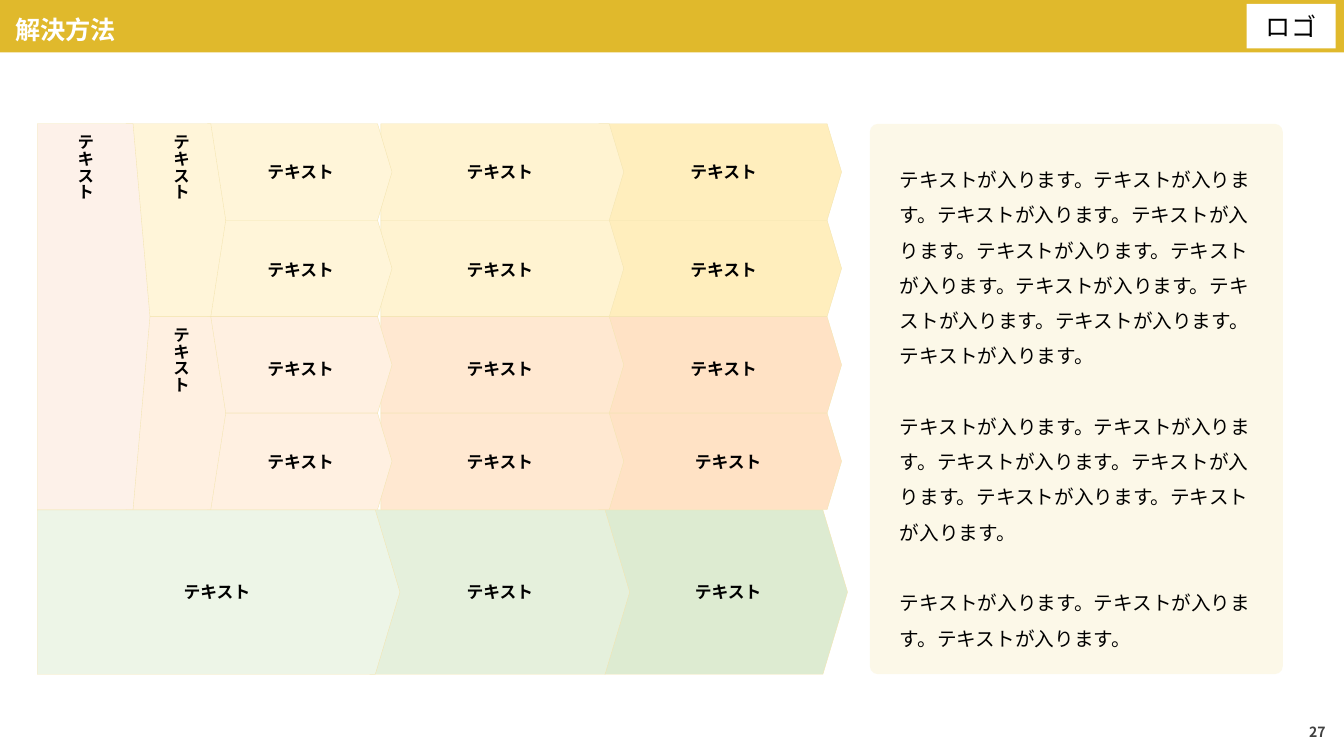
from dataclasses import dataclass

from lxml import etree
from pptx import Presentation
from pptx.dml.color import RGBColor
from pptx.enum.shapes import MSO_SHAPE
from pptx.enum.text import MSO_ANCHOR, PP_ALIGN
from pptx.oxml.ns import qn
from pptx.util import Cm, Pt

RECT, ROUND = MSO_SHAPE.RECTANGLE, MSO_SHAPE.ROUNDED_RECTANGLE
ARROW = MSO_SHAPE.PENTAGON
LEFT, CENTER = PP_ALIGN.LEFT, PP_ALIGN.CENTER
TOP, MIDDLE = MSO_ANCHOR.TOP, MSO_ANCHOR.MIDDLE

FONT = "Noto Sans CJK JP"
GOLD = RGBColor(0xE0, 0xB9, 0x2C)
WHITE = RGBColor(0xFF, 0xFF, 0xFF)
BLACK = RGBColor(0, 0, 0)
GREY = RGBColor(0x40, 0x40, 0x40)
CREAM = RGBColor(0xFC, 0xF8, 0xE8)
EDGE = RGBColor(0xF3, 0xE4, 0xAF)
PINK = RGBColor(0xFD, 0xF1, 0xE9)
YELLOWS = (RGBColor(0xFF, 0xF5, 0xD9), RGBColor(0xFF, 0xF3, 0xD1),
           RGBColor(0xFF, 0xEE, 0xBD))
ORANGES = (RGBColor(0xFF, 0xF0, 0xE1), RGBColor(0xFF, 0xE8, 0xD1),
           RGBColor(0xFF, 0xE2, 0xC5))
GREENS = (RGBColor(0xED, 0xF5, 0xE7), RGBColor(0xE5, 0xF0, 0xDC),
          RGBColor(0xDD, 0xEB, 0xD1))

WORD = "テキスト"
LINE = "テキストが入ります。"
GRID_TOP, ROW = 3.12, 2.43
BASE_TOP, BASE_HIGH = 12.85, 4.14


@dataclass
class Box:
    """Left, top, width and height in centimetres."""
    x: float
    y: float
    w: float
    h: float

    def lengths(self) -> tuple:
        return Cm(self.x), Cm(self.y), Cm(self.w), Cm(self.h)


@dataclass
class Step:
    box: Box
    fill: RGBColor


def add_box(slide, kind, box: Box, fill: RGBColor):
    shape = slide.shapes.add_shape(kind, *box.lengths())
    shape.shadow.inherit = False
    shape.fill.solid()
    shape.fill.fore_color.rgb = fill
    shape.line.fill.background()
    return shape


def add_step(slide, step: Step) -> None:
    shape = add_box(slide, ARROW, step.box, step.fill)
    shape.adjustments[0] = 0.15
    shape.line.color.rgb = EDGE
    shape.line.width = Pt(0.25)


def write(shape, lines: list, size: float, color: RGBColor, bold: bool = False,
          align=LEFT, anchor=MIDDLE, **spacing) -> None:
    frame = shape.text_frame
    frame.word_wrap = True
    frame.vertical_anchor = anchor
    for i, line in enumerate(lines):
        para = frame.paragraphs[0] if i == 0 else frame.add_paragraph()
        for key, value in {"alignment": align, **spacing}.items():
            setattr(para, key, value)
        run = para.add_run()
        run.text = line
        for key, value in {"name": FONT, "size": Pt(size), "bold": bold}.items():
            setattr(run.font, key, value)
        run.font.color.rgb = color
        # East Asian typeface
        etree.SubElement(run.font._element, qn("a:ea"), typeface=FONT)


def add_text(slide, box: Box, lines: list, size: float, color: RGBColor, **style):
    shape = slide.shapes.add_textbox(*box.lengths())
    write(shape, lines, size, color, **style)
    return shape


def add_label(slide, mid_x: float, mid_y: float) -> None:
    box = Box(mid_x - 2, mid_y - 0.38, 4, 0.76)
    add_text(slide, box, [WORD], 12, BLACK, bold=True, align=CENTER)


def add_tall(slide, mid_x: float, top: float, high: float) -> None:
    box = Box(mid_x - 0.93, top, 1.86, high)
    shape = add_text(slide, box, [WORD], 12, BLACK, bold=True)
    shape.text_frame.margin_top = Cm(0.25)
    shape.element.txBody.bodyPr.set("vert", "eaVert")


def main() -> None:
    deck = Presentation()
    deck.slide_width, deck.slide_height = Cm(33.87), Cm(19.05)
    slide = deck.slides.add_slide(deck.slide_layouts[5])

    # Header band and page
    back = slide.background.fill
    back.solid()
    back.fore_color.rgb = GOLD
    add_box(slide, RECT, Box(0, 1.32, 33.87, 17.73), WHITE)
    logo = add_box(slide, RECT, Box(31.42, 0.1, 2.24, 1.12), WHITE)
    write(logo, ["ロゴ"], 18, BLACK, align=CENTER)
    title = slide.shapes.title
    place = dict(zip(("left", "top", "width", "height"),
                     Box(0.13, 0.18, 30.48, 1.12).lengths()))
    for key, value in place.items():
        setattr(title, key, value)
    write(title, ["解決方法"], 18, WHITE, bold=True)
    add_text(slide, Box(32.74, 18.14, 1.4, 0.6), ["27"], 10, GREY, bold=True)

    # Explanation panel
    panel = add_box(slide, ROUND, Box(21.92, 3.12, 10.41, 13.87), CREAM)
    panel.adjustments[0] = 0.02
    add_text(slide, Box(22.43, 3.81, 9.47, 12.75),
             [LINE * count for count in (10, 6, 3)], 14, BLACK, anchor=TOP,
             line_spacing=Pt(25.2), space_after=Pt(25.2))

    # Arrows, from right to left so that each one overlaps the next
    bases = ((0.94, 9.14), (9.32, 6.55), (15.24, 6.12))
    columns = ((5.23, 4.65), (9.6, 6.12), (15.09, 6.12))
    tones = (YELLOWS, YELLOWS, ORANGES, ORANGES)
    steps = []
    for col in (2, 1, 0):
        x, w = bases[col]
        steps.append(Step(Box(x, BASE_TOP, w, BASE_HIGH), GREENS[col]))
        x, w = columns[col]
        for row, tone in enumerate(tones):
            steps.append(Step(Box(x, GRID_TOP + row * ROW, w, ROW), tone[col]))
    for row in (2, 0):
        steps.append(Step(Box(3.18, GRID_TOP + row * ROW, 2.51, 2 * ROW),
                          tones[row][0]))
    steps.append(Step(Box(0.94, GRID_TOP, 2.84, 4 * ROW), PINK))
    for step in steps:
        add_step(slide, step)

    # Labels
    for row, mid_y in enumerate((4.34, 6.81, 9.3, 11.63, 14.91)):
        first = 5.47 if row == 4 else 7.58
        last = 18.35 if row > 2 else 18.24
        for mid_x in (first, 12.6, last):
            add_label(slide, mid_x, mid_y)
    add_tall(slide, 2.15, GRID_TOP, 4 * ROW)
    for row in (0, 2):
        add_tall(slide, 4.56, GRID_TOP + row * ROW, 2 * ROW)

    deck.save("out.pptx")


if __name__ == "__main__":
    main()
